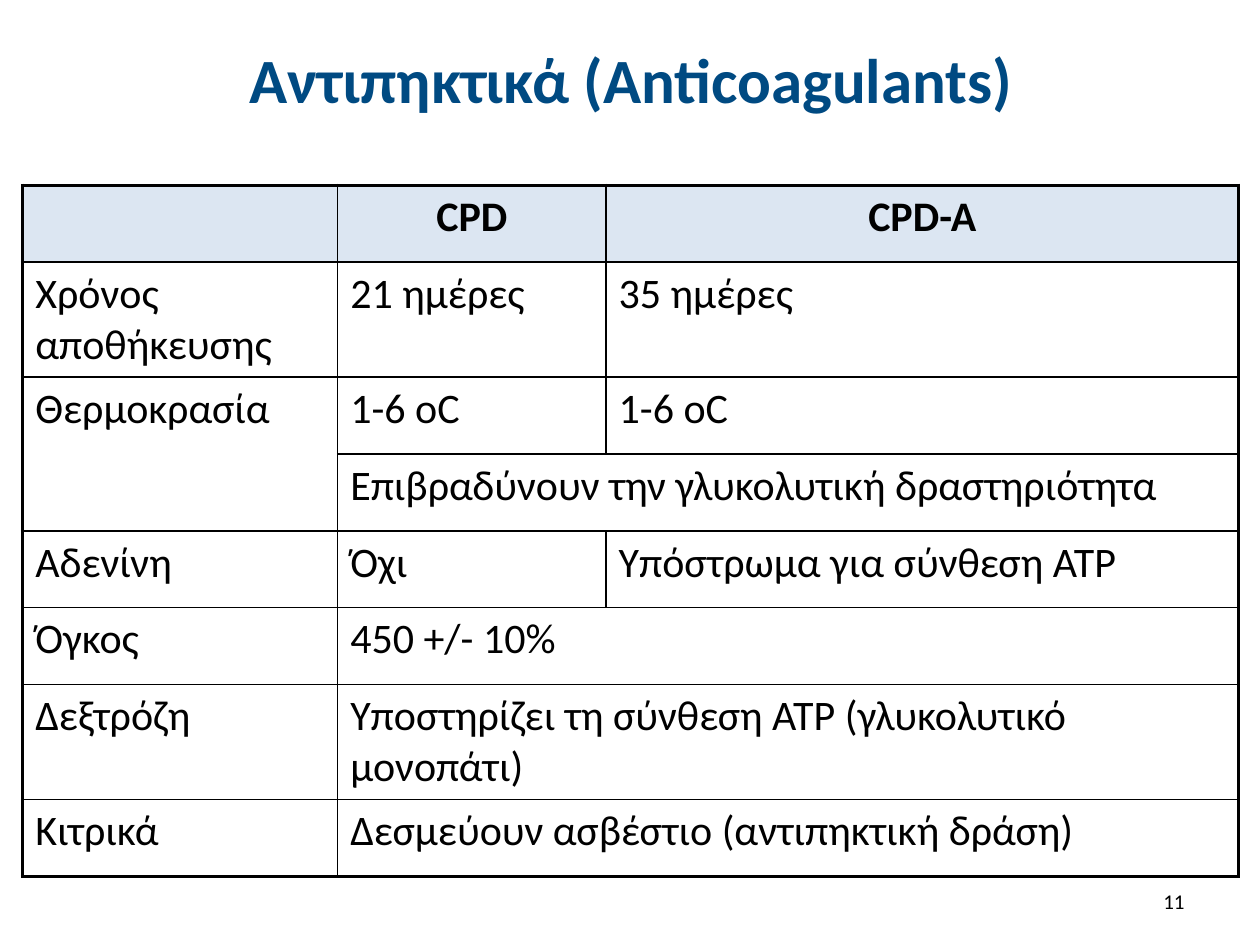
from lxml import etree
from pptx import Presentation
from pptx.dml.color import RGBColor
from pptx.enum.text import MSO_ANCHOR as ANCHOR, PP_ALIGN as ALIGN
from pptx.oxml.ns import qn
from pptx.util import Inches, Pt

NAVY = RGBColor(0x00, 0x4A, 0x82)
BLACK = RGBColor(0x00, 0x00, 0x00)
HEADER_FILL = RGBColor(0xDC, 0xE6, 0xF2)
INNER, OUTER = Pt(1), Pt(2.25)

COL_WIDTHS = [2.5, 2.13, 5.02]
ROW_HEIGHT = 0.61
# A row with two entries has its second one spread over both value columns.
ROWS = [
    ["", "CPD", "CPD-A"],
    ["Χρόνος αποθήκευσης", "21 ημέρες", "35 ημέρες"],
    ["Θερμοκρασία", "1-6 οC", "1-6 οC"],
    ["", "Επιβραδύνουν την γλυκολυτική δραστηριότητα"],
    ["Αδενίνη", "Όχι", "Υπόστρωμα για σύνθεση ATP"],
    ["Όγκος", "450 +/- 10%"],
    ["Δεξτρόζη", "Υποστηρίζει τη σύνθεση ATP (γλυκολυτικό μονοπάτι)"],
    ["Κιτρικά", "Δεσμεύουν ασβέστιο (αντιπηκτική δράση)"],
]


def write_text(tf, text, size=24, color=BLACK, bold=False, align=ALIGN.LEFT,
               anchor=None):
    tf.word_wrap = True
    if anchor is not None:
        tf.vertical_anchor = anchor
    p = tf.paragraphs[0]
    p.alignment = align
    r = p.add_run()
    r.text = text
    r.font.name = "Calibri"
    r.font.size = Pt(size)
    r.font.bold = bold
    r.font.color.rgb = color


def set_borders(cell, **widths):
    """Draw black cell borders; keys are L, R, T, B in schema order."""
    tc_pr = cell._tc.get_or_add_tcPr()
    for side, width in widths.items():
        ln = etree.SubElement(tc_pr, qn(f"a:ln{side}"), w=str(width))
        fill = etree.SubElement(ln, qn("a:solidFill"))
        etree.SubElement(fill, qn("a:srgbClr"), val=str(BLACK))


prs = Presentation()
prs.slide_width, prs.slide_height = Inches(10), Inches(7.5)
s = prs.slides.add_slide(prs.slide_layouts[6])

# Table
n_rows, n_cols = len(ROWS), len(COL_WIDTHS)
table = s.shapes.add_table(
    n_rows, n_cols, Inches(0.18), Inches(1.47),
    Inches(sum(COL_WIDTHS)), Inches(ROW_HEIGHT * n_rows)).table
table.first_row = False
table.horz_banding = False
for column, width in zip(table.columns, COL_WIDTHS):
    column.width = Inches(width)
for row in table.rows:
    row.height = Inches(ROW_HEIGHT)

table.cell(2, 0).merge(table.cell(3, 0))
for i, texts in enumerate(ROWS):
    header = i == 0
    if len(texts) < n_cols:
        table.cell(i, 1).merge(table.cell(i, 2))
    for j in range(n_cols):
        cell = table.cell(i, j)
        last_col = j >= len(texts) - 1
        set_borders(cell,
                    L=OUTER if j == 0 else INNER,
                    R=OUTER if last_col else INNER,
                    T=OUTER if header else INNER,
                    B=OUTER if i == n_rows - 1 else INNER)
        if header:
            cell.fill.solid()
            cell.fill.fore_color.rgb = HEADER_FILL
        else:
            cell.fill.background()
        if j < len(texts) and texts[j]:
            write_text(cell.text_frame, texts[j], bold=header,
                       align=ALIGN.CENTER if header else ALIGN.LEFT)

# Title and slide number
title = s.shapes.add_textbox(Inches(0.51), Inches(0.13), Inches(9), Inches(0.99))
write_text(title.text_frame, "Αντιπηκτικά (Anticoagulants)", size=36, color=NAVY,
           bold=True, align=ALIGN.CENTER, anchor=ANCHOR.MIDDLE)
number = s.shapes.add_textbox(Inches(7.17), Inches(6.95), Inches(2.33), Inches(0.4))
write_text(number.text_frame, "11", size=12, align=ALIGN.RIGHT, anchor=ANCHOR.MIDDLE)

prs.save("out.pptx")
